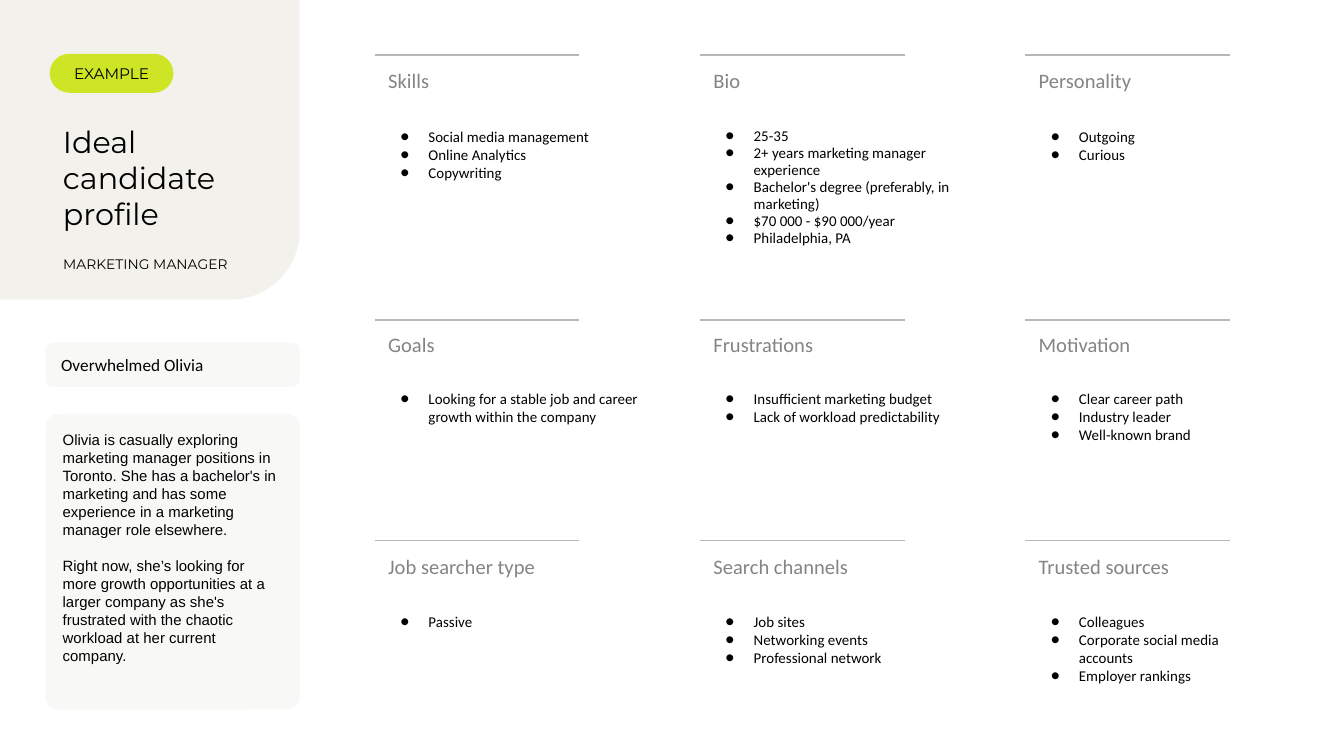
from lxml import etree
from pptx import Presentation
from pptx.dml.color import RGBColor
from pptx.enum.shapes import MSO_CONNECTOR, MSO_SHAPE
from pptx.enum.text import MSO_ANCHOR, MSO_AUTO_SIZE, PP_ALIGN
from pptx.oxml.ns import qn
from pptx.util import Inches, Pt

BLACK = RGBColor(0x00, 0x00, 0x00)
GRAY = RGBColor(0x84, 0x84, 0x84)
RULE = RGBColor(0xB7, 0xB7, 0xB7)
LIME = RGBColor(0xCE, 0xE5, 0x25)
SAND = RGBColor(0xF2, 0xF1, 0xEB)
CARD = RGBColor(0xF8, 0xF8, 0xF6)

ROUND = MSO_SHAPE.ROUNDED_RECTANGLE
ROUND_ONE = MSO_SHAPE.ROUND_1_RECTANGLE
STRAIGHT = MSO_CONNECTOR.STRAIGHT
TOP, MIDDLE = MSO_ANCHOR.TOP, MSO_ANCHOR.MIDDLE
LEFT, CENTER = PP_ALIGN.LEFT, PP_ALIGN.CENTER
NO_FIT = MSO_AUTO_SIZE.NONE

COL_LEFT, COL_STEP = 2.79, 2.42
COL_WIDTHS = (2.06, 2.06, 1.96)
RULE_WIDTH = 1.52

SECTIONS = [
    (0.41, 0.41, 0.85, [
        ("Skills", 0.61, ["Social media management", "Online Analytics", "Copywriting"]),
        ("Bio", 1.24, ["25-35", "2+ years marketing manager experience",
                       "Bachelor's degree (preferably, in marketing)",
                       "$70 000 - $90 000/year", "Philadelphia, PA"]),
        ("Personality", 0.47, ["Outgoing", "Curious"]),
    ]),
    (2.38, 2.37, 2.8, [
        ("Goals", 0.61, ["Looking for a stable job and career growth within the company"]),
        ("Frustrations", 0.47, ["Insufficient marketing budget",
                                "Lack of workload predictability"]),
        ("Motivation", 0.61, ["Clear career path", "Industry leader", "Well-known brand"]),
    ]),
    (4.02, 4.02, 4.46, [
        ("Job searcher type", 0.34, ["Passive"]),
        ("Search channels", 0.61, ["Job sites", "Networking events", "Professional network"]),
        ("Trusted sources", 0.74, ["Colleagues", "Corporate social media accounts",
                                   "Employer rankings"]),
    ]),
]

PROFILE = [
    "Olivia is casually exploring marketing manager positions in Toronto. She has a "
    "bachelor's in marketing and has some experience in a marketing manager role elsewhere.",
    "Right now, she’s looking for more growth opportunities at a larger company as she's "
    "frustrated with the chaotic workload at her current company.",
]


def add_bullet(p):
    pPr = p._p.get_or_add_pPr()
    pPr.set("marL", str(Inches(0.3)))
    pPr.set("indent", str(Inches(-0.21)))
    color = etree.SubElement(pPr, qn("a:buClr"))
    etree.SubElement(color, qn("a:srgbClr"), val=str(BLACK))
    etree.SubElement(pPr, qn("a:buFont"), typeface="Calibri")
    etree.SubElement(pPr, qn("a:buChar"), char="●")


def write(tf, lines, size=8, font="Calibri", color=BLACK, align=LEFT, anchor=TOP,
          bullets=False, spacing=None, gap=0):
    tf.word_wrap = True
    tf.auto_size = NO_FIT
    tf.vertical_anchor = anchor
    tf.margin_left = tf.margin_right = tf.margin_top = tf.margin_bottom = Inches(0.1)
    for i, line in enumerate(lines):
        p = tf.paragraphs[0] if i == 0 else tf.add_paragraph()
        p.alignment = align
        if spacing:
            p.line_spacing = spacing
        if gap and i:
            p.space_before = Pt(gap)
        if bullets:
            add_bullet(p)
        r = p.add_run()
        r.text = line
        r.font.size = Pt(size)
        r.font.name = font
        r.font.color.rgb = color


class Deck:
    def __init__(self, prs):
        self.s = prs.slides.add_slide(prs.slide_layouts[5])

    def title(self, box, text, **style):
        sp = self.s.shapes.title
        sp.left, sp.top, sp.width, sp.height = map(Inches, box)
        write(sp.text_frame, [text], **style)
        self.s.shapes._spTree.append(sp._element)

    def text(self, box, lines, **style):
        sp = self.s.shapes.add_textbox(*map(Inches, box))
        write(sp.text_frame, lines, **style)

    def shape(self, kind, box, fill, radius, lines=(), **style):
        sp = self.s.shapes.add_shape(kind, *map(Inches, box))
        sp.shadow.inherit = False
        sp.adjustments[0] = radius
        sp.fill.solid()
        sp.fill.fore_color.rgb = fill
        sp.line.fill.background()
        write(sp.text_frame, lines, **style)
        return sp

    def rule(self, x, y):
        line = self.s.shapes.add_connector(
            STRAIGHT, Inches(x), Inches(y), Inches(x + RULE_WIDTH), Inches(y))
        line.line.color.rgb = RULE
        line.line.width = Pt(0.75)
        etree.SubElement(line._element.spPr, qn("a:effectLst"))


def main():
    prs = Presentation()
    prs.slide_width = Inches(10)
    prs.slide_height = prs.slide_width * 9 // 16
    deck = Deck(prs)

    panel = deck.shape(ROUND_ONE, (0, 0, 2.23, 2.23), SAND, 0.23)
    panel._element.spPr.find(qn("a:xfrm")).set("flipV", "1")
    deck.shape(ROUND, (0.37, 0.4, 0.92, 0.29), LIME, 0.5, ["EXAMPLE"],
               size=8.2, font="Montserrat", align=CENTER, anchor=MIDDLE)
    deck.text((0.37, 0.78, 1.86, 1.08), ["Ideal candidate profile"],
              size=16.2, font="Montserrat", anchor=MIDDLE)
    deck.title((0.37, 1.8, 1.86, 0.39), "MARKETING MANAGER", size=7.4, font="Montserrat")

    for rule_y, head_y, list_y, sections in SECTIONS:
        for col, (heading, height, items) in enumerate(sections):
            x, width = COL_LEFT + col * COL_STEP, COL_WIDTHS[col]
            deck.rule(x, rule_y)
            deck.text((x, head_y, width, 0.54), [heading], size=11, color=GRAY)
            deck.text((x, list_y, width, height), items, bullets=True,
                      spacing=0.95 if heading == "Bio" else None)

    deck.shape(ROUND, (0.34, 2.55, 1.89, 0.33), CARD, 0.17, ["Overwhelmed Olivia"],
               size=9.2, anchor=MIDDLE)
    deck.shape(ROUND, (0.34, 3.08, 1.89, 2.2), CARD, 0.05, PROFILE, font="Arial", gap=10)

    prs.save("out.pptx")


if __name__ == "__main__":
    main()
